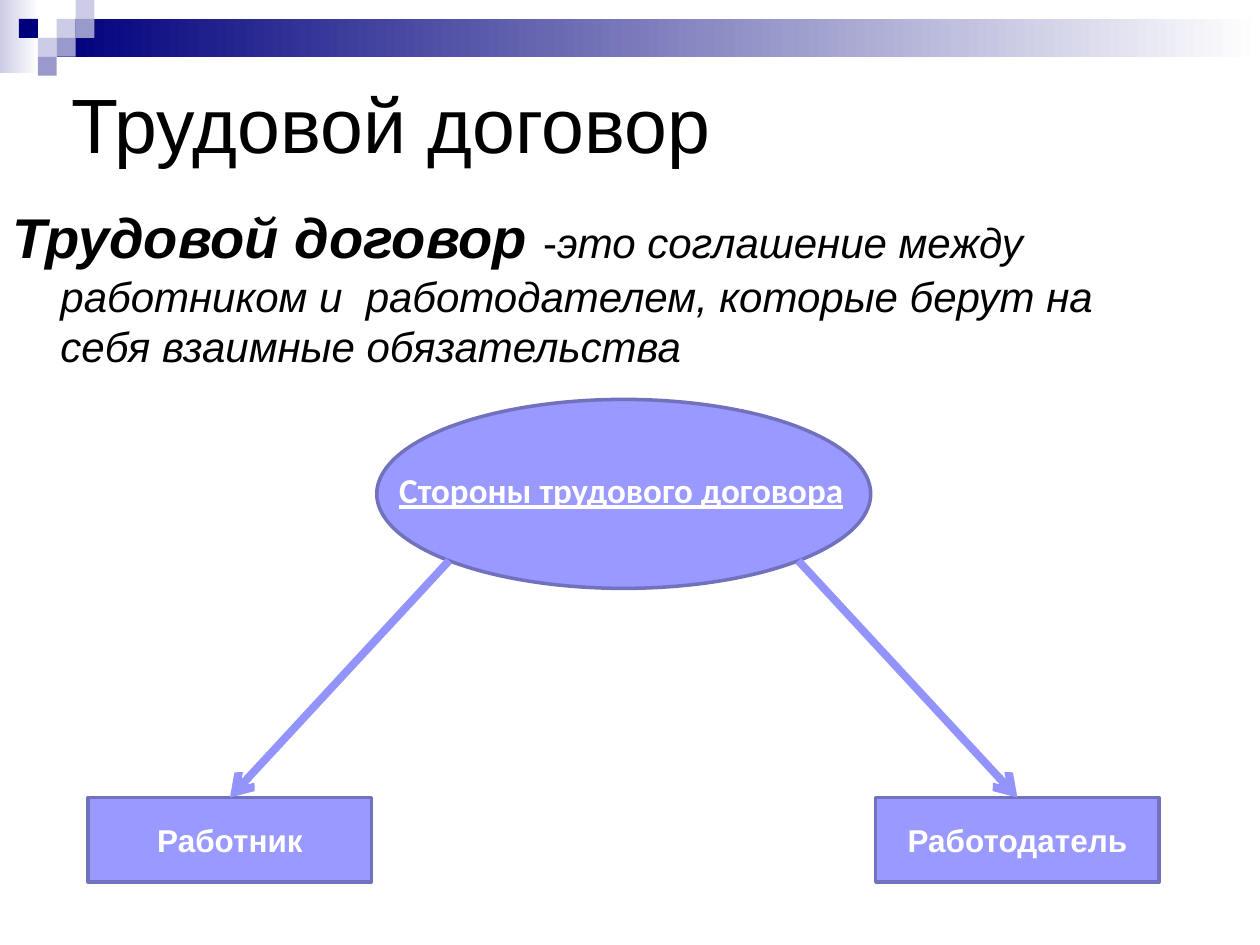
from dataclasses import dataclass
from math import sqrt

from lxml import etree
from pptx import Presentation
from pptx.dml.color import RGBColor
from pptx.enum.shapes import MSO_CONNECTOR, MSO_SHAPE
from pptx.enum.text import MSO_ANCHOR, MSO_AUTO_SIZE, PP_ALIGN
from pptx.oxml.ns import qn
from pptx.util import Inches, Pt

RECT, OVAL = MSO_SHAPE.RECTANGLE, MSO_SHAPE.OVAL
STRAIGHT = MSO_CONNECTOR.STRAIGHT
LEFT, CENTER = PP_ALIGN.LEFT, PP_ALIGN.CENTER
TOP, MIDDLE = MSO_ANCHOR.TOP, MSO_ANCHOR.MIDDLE
NO_AUTOFIT = MSO_AUTO_SIZE.NONE
TOP_SITE = 0


@dataclass(frozen=True)
class Theme:
    text: str = "000000"
    light_text: str = "FFFFFF"
    paper: str = "FFFFFF"
    navy: str = "00007D"
    pale: str = "CCCCE6"
    mid: str = "9999CC"
    party: str = "9999FF"
    party_line: str = "7171BD"
    arrow: str = "9393FC"
    font: str = "Arial"
    label_font: str = "Calibri"
    title_size: int = 44
    term_size: int = 32
    body_size: int = 24
    label_size: int = 20
    party_size: int = 18


THEME = Theme()


def place(item, box):
    for name, value in zip(("left", "top", "width", "height"), box):
        setattr(item, name, Inches(value))


def write(paragraph, text, color, **formats):
    run = paragraph.add_run()
    run.text = text
    run.font.color.rgb = RGBColor.from_string(color)
    for name, value in formats.items():
        setattr(run.font, name, value)


def add_block(shapes, kind, box, fill, line=None):
    block = shapes.add_shape(kind, *map(Inches, box))
    block.shadow.inherit = False
    if isinstance(fill, tuple):
        block.fill.gradient()
        block.fill.gradient_angle = 0
        for stop, color in zip(block.fill.gradient_stops, fill):
            stop.color.rgb = RGBColor.from_string(color)
    else:
        block.fill.solid()
        block.fill.fore_color.rgb = RGBColor.from_string(fill)
    if line:
        block.line.color.rgb = RGBColor.from_string(line)
        block.line.width = Pt(2)
    else:
        block.line.fill.background()
    return block


def add_header(slide, box):
    """Gradient band with a mosaic of small squares at its left end."""
    left, top, width, height = box
    cell = height / 4
    shapes = slide.shapes.add_group_shape().shapes
    add_block(shapes, RECT, (left, top, 0.31, 0.58), (THEME.pale, THEME.paper))
    add_block(shapes, RECT, (left + 3 * cell, top + cell, width - 3 * cell, 2 * cell),
              (THEME.navy, THEME.paper))
    mosaic = [(3, 1, THEME.pale), (4, 0, THEME.pale), (4, 1, THEME.mid),
              (2, 2, THEME.pale), (1, 1, THEME.navy), (3, 2, THEME.mid),
              (2, 3, THEME.mid)]
    for column, row, color in mosaic:
        add_block(shapes, RECT, (left + column * cell, top + row * cell, cell, cell), color)


def add_title(slide, box, text):
    title = slide.shapes.title
    place(title, box)
    title.text_frame.vertical_anchor = MIDDLE
    title.text_frame.auto_size = NO_AUTOFIT
    heading = title.text_frame.paragraphs[0]
    heading.alignment = LEFT
    write(heading, text, THEME.text, name=THEME.font, size=Pt(THEME.title_size))


def add_definition(slide, box, term, dash, meaning):
    body = slide.placeholders[1]
    place(body, box)
    frame = body.text_frame
    frame.auto_size = NO_AUTOFIT
    frame.vertical_anchor = TOP
    definition = frame.paragraphs[0]
    # Hanging indent without a bullet
    properties = definition._p.get_or_add_pPr()
    properties.set("marL", str(Inches(0.38)))
    properties.set("indent", str(Inches(-0.38)))
    etree.SubElement(properties, qn("a:buNone"))
    for text, size, bold, italic in ((term, THEME.term_size, True, True),
                                     (dash, THEME.body_size, False, False),
                                     (meaning, THEME.body_size, False, True)):
        write(definition, text, THEME.text, name=THEME.font, size=Pt(size),
              bold=bold, italic=italic)


def add_contract(slide, box, text):
    """Ellipse with its underlined label."""
    left, top, width, _ = box
    shapes = slide.shapes.add_group_shape().shapes
    add_block(shapes, OVAL, box, THEME.party, THEME.party_line)
    label = shapes.add_textbox(*map(Inches, (left + 0.08, top + 0.5, width - 0.17, 0.44)))
    label.text_frame.word_wrap = True
    write(label.text_frame.paragraphs[0], text, THEME.light_text, name=THEME.label_font,
          size=Pt(THEME.label_size), bold=True, underline=True)


def add_party(slide, box, text):
    party = add_block(slide.shapes, RECT, box, THEME.party, THEME.party_line)
    party.text_frame.word_wrap = True
    party.text_frame.vertical_anchor = MIDDLE
    name = party.text_frame.paragraphs[0]
    name.alignment = CENTER
    write(name, text, THEME.light_text, name=THEME.font, size=Pt(THEME.party_size), bold=True)
    return party


def add_arrow(slide, start, party):
    x, y = map(Inches, start)
    arrow = slide.shapes.add_connector(STRAIGHT, x, y, x, y)
    arrow.end_connect(party, TOP_SITE)
    arrow.line.color.rgb = RGBColor.from_string(THEME.arrow)
    arrow.line.width = Pt(4.5)
    etree.SubElement(arrow.line._get_or_add_ln(), qn("a:tailEnd"), type="arrow")
    etree.SubElement(arrow._element.spPr, qn("a:effectLst"))


def add_parties_diagram(slide, box):
    left, top, width, height = box
    party_width, party_height = 2.25, 0.67
    oval_width, oval_height = 3.92, 1.5
    oval_left = left + (width - oval_width) / 2
    add_contract(slide, (oval_left, top, oval_width, oval_height),
                 "Стороны трудового договора")

    # Arrows leave the ellipse on its lower diagonals
    center_x = left + width / 2
    reach = oval_width / 2 / sqrt(2)
    start_y = top + oval_height / 2 * (1 + 1 / sqrt(2))
    party_top = top + height - party_height
    for side, party_left, text in ((1, left + width - party_width, "Работодатель"),
                                   (-1, left, "Работник")):
        party = add_party(slide, (party_left, party_top, party_width, party_height), text)
        add_arrow(slide, (center_x + side * reach, start_y), party)


def main():
    prs = Presentation()
    prs.slide_width, prs.slide_height = Inches(10), Inches(7.5)
    slide = prs.slides.add_slide(prs.slide_layouts[1])
    add_header(slide, (0, 0, 10, 0.6))
    add_title(slide, (0.47, 0.47, 8.5, 1), "Трудовой договор")
    add_definition(slide, (0, 1.56, 9.37, 2.91), "Трудовой договор ", "-",
                   "это соглашение между работником и  работодателем, "
                   "которые берут на себя взаимные обязательства")
    add_parties_diagram(slide, (0.7, 3.17, 8.5, 3.83))
    prs.save("out.pptx")


if __name__ == "__main__":
    main()
